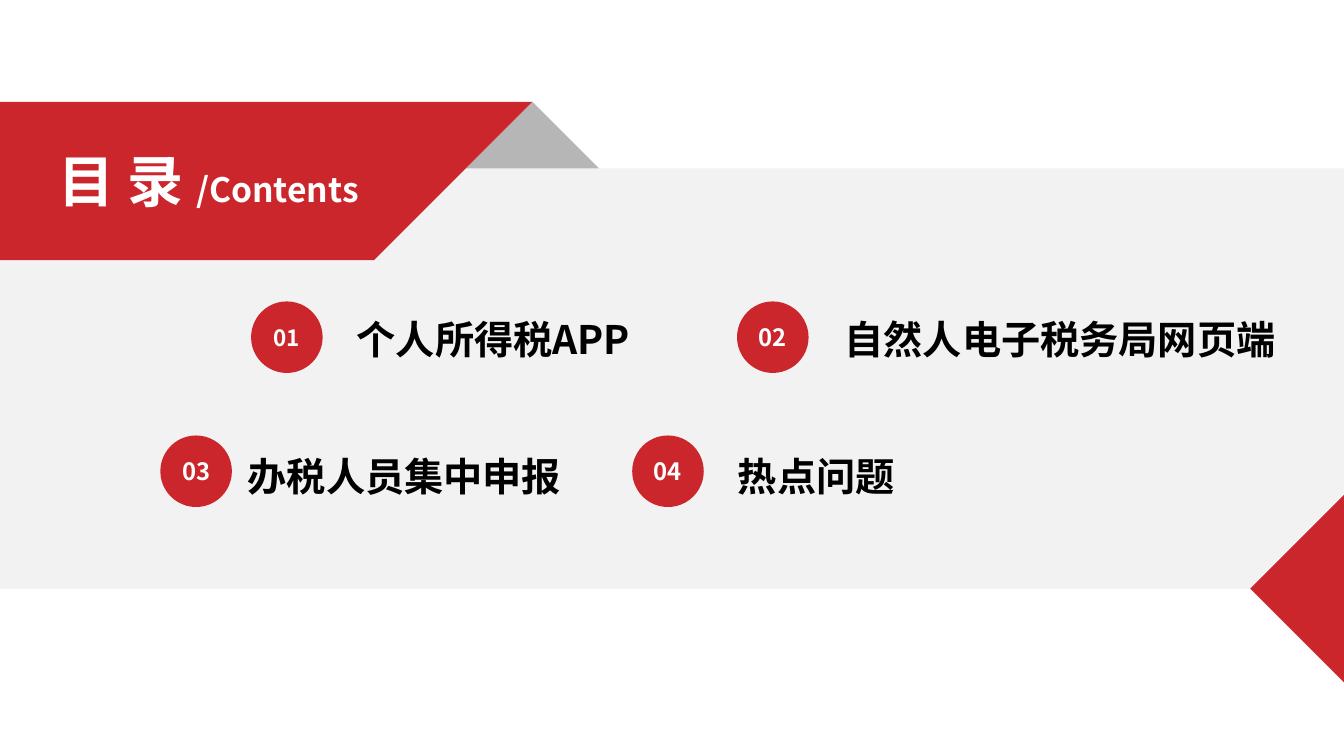
import pptx
import pptx.util
import pptx.dml.color
import pptx.enum.shapes
import pptx.enum.text

SHAPES = pptx.enum.shapes.MSO_SHAPE
ALIGN = pptx.enum.text.PP_ALIGN
ANCHOR = pptx.enum.text.MSO_ANCHOR
AUTO_SIZE = pptx.enum.text.MSO_AUTO_SIZE

WIDTH, HEIGHT = 13.33, 7.5
RED, GRAY, PALE = "CC262D", "B6B6B6", "F2F2F2"
FONT = "Noto Sans CJK SC"

TITLE = [("目 录 ", 40), ("/Contents", 24)]
# number, number size, badge left, label, label left, label width, row
ITEMS = [
    ("01", 16, 2.49, "个人所得税APP", 3.44, 3.62, 0),
    ("02", 17, 7.31, "自然人电子税务局网页端", 8.28, 4.8, 0),
    ("03", 17, 1.59, "办税人员集中申报", 2.36, 3.79, 1),
    ("04", 17, 6.27, "热点问题", 7.22, 3.79, 1),
]
BADGE_TOP, LABEL_TOP, ROW_PITCH = 2.99, 3.08, 1.33
LABEL_SHIFT = 0.03  # second-row labels sit slightly lower
BADGE = 0.71

PANEL_TOP, PANEL_HEIGHT = 1.67, 4.17
BANNER_TOP, BANNER_WIDTH, BANNER_HEIGHT = 1.01, 5.28, 1.57
FOLD = 1.51    # height and half base of the gray triangle
CORNER = 0.93  # depth and half height of the red corner

deck = pptx.Presentation()
deck.slide_width = pptx.util.Inches(WIDTH)
deck.slide_height = pptx.util.Inches(HEIGHT)
page = deck.slides.add_slide(deck.slide_layouts[6])


def color(value):
    return pptx.dml.color.RGBColor.from_string(value)


def inches(*lengths):
    return [pptx.util.Inches(length) for length in lengths]


def paint(shape, fill):
    shape.shadow.inherit = False
    shape.fill.solid()
    shape.fill.fore_color.rgb = color(fill)
    shape.line.fill.background()
    return shape


def add_block(kind, place, fill):
    return paint(page.shapes.add_shape(kind, *inches(*place)), fill)


def add_outline(points, fill):
    corners = [tuple(inches(*point)) for point in points]
    builder = page.shapes.build_freeform(*corners[0])
    builder.add_line_segments(corners[1:], close=True)
    return paint(builder.convert_to_shape(), fill)


def write(box, spans, ink="000000", align=ALIGN.LEFT, anchor=ANCHOR.TOP, grow=False):
    """Put (text, size) spans into the single paragraph of a box."""
    frame = box.text_frame
    frame.word_wrap = True
    frame.vertical_anchor = anchor
    if grow:
        frame.auto_size = AUTO_SIZE.SHAPE_TO_FIT_TEXT
    para = frame.paragraphs[0]
    para.alignment = align
    for text, size in spans:
        span = para.add_run()
        span.text = text
        span.font.name = FONT
        span.font.size = pptx.util.Pt(size)
        span.font.bold = True
        span.font.color.rgb = color(ink)
        properties = span.font._element
        east_asian = properties.makeelement(pptx.oxml.ns.qn("a:ea"), {"typeface": FONT})
        properties.find(pptx.oxml.ns.qn("a:latin")).addnext(east_asian)


add_block(SHAPES.ISOSCELES_TRIANGLE,
          (BANNER_WIDTH - FOLD, BANNER_TOP, 2 * FOLD, FOLD), GRAY)
add_block(SHAPES.RECTANGLE, (0, PANEL_TOP, WIDTH, PANEL_HEIGHT), PALE)

for number, size, badge_left, label, label_left, label_width, row in ITEMS:
    badge_top = BADGE_TOP + row * ROW_PITCH
    label_top = LABEL_TOP + row * (ROW_PITCH + LABEL_SHIFT)
    badge = add_block(SHAPES.ROUNDED_RECTANGLE, (badge_left, badge_top, BADGE, BADGE), RED)
    badge.adjustments[0] = 0.5
    write(badge, [(number, size)], ink="FFFFFF", align=ALIGN.CENTER, anchor=ANCHOR.MIDDLE)
    label_box = page.shapes.add_textbox(*inches(label_left, label_top, label_width, 0.57))
    write(label_box, [(label, 28)], grow=True)

banner_bottom = BANNER_TOP + BANNER_HEIGHT
add_outline([(0, BANNER_TOP), (BANNER_WIDTH, BANNER_TOP),
             (BANNER_WIDTH - BANNER_HEIGHT, banner_bottom), (0, banner_bottom)], RED)
title_box = page.shapes.add_textbox(*inches(0.32, 1.4, 3.5, 0.77))
write(title_box, TITLE, ink="FFFFFF", align=ALIGN.CENTER, grow=True)

panel_bottom = PANEL_TOP + PANEL_HEIGHT
add_outline([(WIDTH - CORNER, panel_bottom), (WIDTH, panel_bottom - CORNER),
             (WIDTH, panel_bottom + CORNER)], RED)

deck.save("out.pptx")
